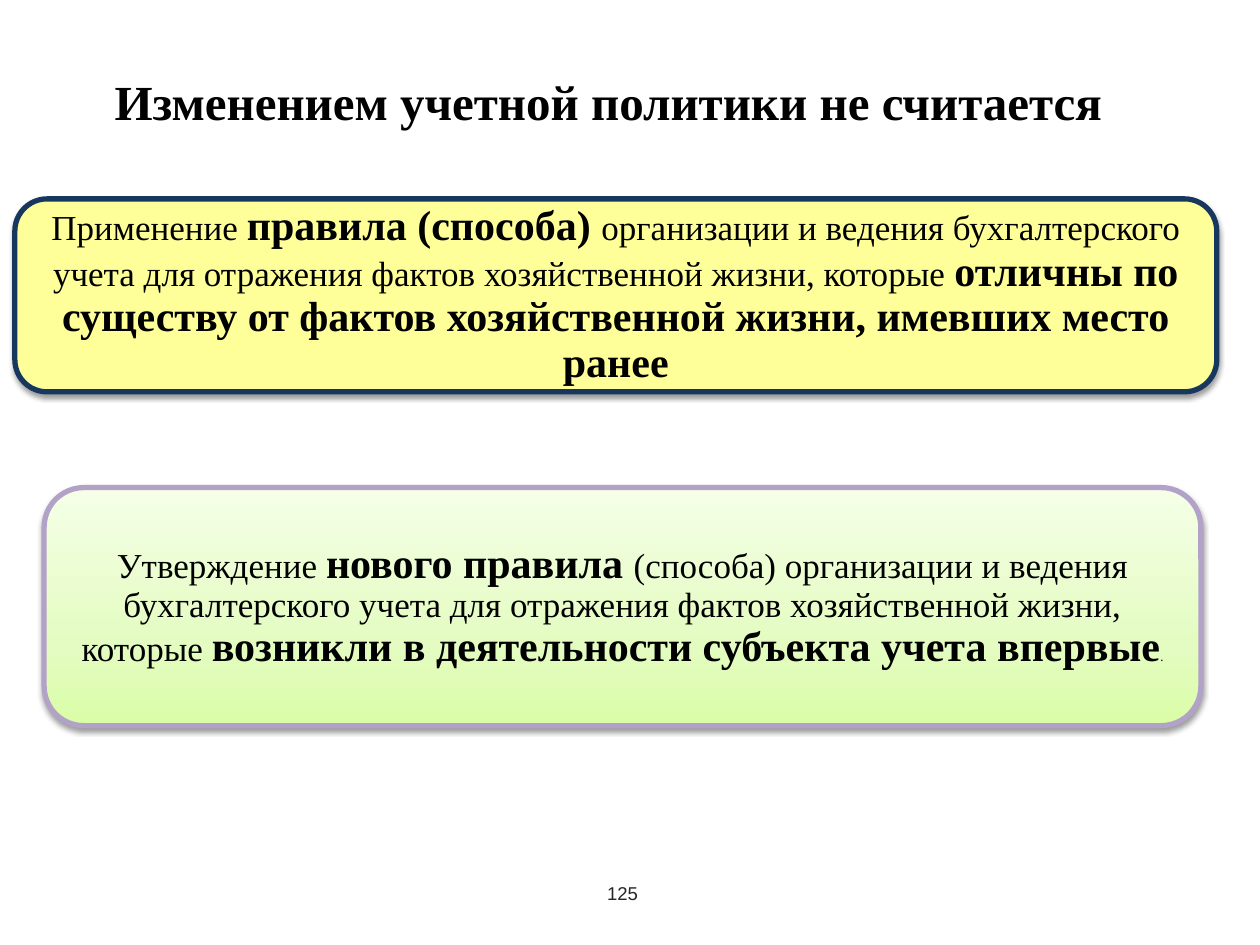
import pptx
import pptx.util
import pptx.dml.color
import pptx.enum.shapes
import pptx.enum.text
import pptx.oxml
import pptx.oxml.ns

Cm = pptx.util.Cm
Pt = pptx.util.Pt
ALIGN = pptx.enum.text.PP_ALIGN
ANCHOR = pptx.enum.text.MSO_ANCHOR

COLOURS = {
    "text": "000000", "number": "252523",
    "yellow": "FFFF99", "navy": "17375E", "lilac": "B3A2C7",
    "green_dark": "DAFDA7", "green_mid": "E4FCC2", "green_light": "F5FFE7",
}
NAMESPACE = pptx.oxml.ns.nsdecls("a")

# Character formats
PLAIN = {"name": "Times New Roman", "size": Pt(20), "bold": False}
STRONG = {"name": "Times New Roman", "size": Pt(24), "bold": True}
HEADING = {"name": "Times New Roman", "size": Pt(28), "bold": True}
FULL_STOP = {"name": "Calibri", "size": Pt(7), "bold": False}
NUMBER = {"name": "Arial", "size": Pt(10.6), "bold": False}

# Frame formats
NO_MARGINS = {"margin_left": 0, "margin_right": 0, "margin_top": 0, "margin_bottom": 0,
              "word_wrap": True, "vertical_anchor": ANCHOR.TOP,
              "auto_size": pptx.enum.text.MSO_AUTO_SIZE.NONE}
PANEL_FRAME = {"margin_left": Cm(0.2), "margin_right": Cm(0.2),
               "margin_top": Cm(0.1), "margin_bottom": Cm(0.1),
               "word_wrap": True, "vertical_anchor": ANCHOR.MIDDLE}


def colour(name):
    return pptx.dml.color.RGBColor.from_string(COLOURS[name])


def apply_format(target, values):
    for attribute, value in values.items():
        setattr(target, attribute, value)


def write_runs(paragraph, runs, text_colour="text"):
    for text, values in runs:
        run = paragraph.add_run()
        run.text = text
        apply_format(run.font, values)
        run.font.color.rgb = colour(text_colour)


def add_title(slide, text):
    title = slide.shapes.title
    apply_format(title, {"left": Cm(2.31), "top": Cm(1.45),
                         "width": Cm(21.92), "height": Cm(1.19)})
    apply_format(title.text_frame, NO_MARGINS)
    paragraph = title.text_frame.paragraphs[0]
    paragraph.alignment = ALIGN.LEFT
    write_runs(paragraph, [(text, HEADING)])


def add_shadow(shape):
    shape.shadow.inherit = False
    effects = shape._element.spPr.find(pptx.oxml.ns.qn("a:effectLst"))
    effects.append(pptx.oxml.parse_xml(
        f'<a:outerShdw {NAMESPACE} blurRad="{Pt(3.1)}" dist="{Pt(1.6)}" dir="5400000" '
        f'rotWithShape="0"><a:srgbClr val="{COLOURS["text"]}"><a:alpha val="38000"/>'
        '</a:srgbClr></a:outerShdw>'))


def fill_gradient(shape, stops):
    """Fill upwards from the first stop to the last one."""
    shape.fill.gradient()
    shape.fill.gradient_angle = 90
    stop_list = shape._element.spPr.find(
        ".//" + pptx.oxml.ns.qn("a:gsLst"))
    for stop in list(stop_list):
        stop_list.remove(stop)
    for position, name in stops:
        stop_list.append(pptx.oxml.parse_xml(
            f'<a:gs {NAMESPACE} pos="{position * 1000}">'
            f'<a:srgbClr val="{COLOURS[name]}"/></a:gs>'))


def add_panel(slide, left, top, width, height, line, runs):
    panel = slide.shapes.add_shape(
        pptx.enum.shapes.MSO_SHAPE.ROUNDED_RECTANGLE,
        Cm(left), Cm(top), Cm(width), Cm(height))
    panel.line.color.rgb = colour(line)
    panel.line.width = Pt(3)
    add_shadow(panel)
    apply_format(panel.text_frame, PANEL_FRAME)
    paragraph = panel.text_frame.paragraphs[0]
    apply_format(paragraph, {"alignment": ALIGN.CENTER, "line_spacing": 0.9})
    write_runs(paragraph, runs)
    return panel


def add_page_number(slide, text):
    box = slide.shapes.add_textbox(Cm(12.24), Cm(17.81), Cm(1.2), Cm(0.43))
    apply_format(box.text_frame, NO_MARGINS)
    paragraph = box.text_frame.paragraphs[0]
    paragraph.line_spacing = Pt(11.6)
    write_runs(paragraph, [(text, NUMBER)], "number")


def main():
    presentation = pptx.Presentation()
    apply_format(presentation, {"slide_width": Cm(25.4), "slide_height": Cm(19.05)})
    slide = presentation.slides.add_slide(presentation.slide_layouts[5])

    add_title(slide, "Изменением учетной политики не считается")

    # Rule for facts that differ in substance
    different = add_panel(slide, 0.3, 4.01, 24.23, 3.89, "navy", [
        ("Применение ", PLAIN),
        ("правила (способа) ", STRONG),
        ("организации и ведения бухгалтерского учета для отражения фактов "
         "хозяйственной жизни, которые ", PLAIN),
        ("отличны по существу от фактов хозяйственной жизни, имевших место ранее", STRONG),
    ])
    different.fill.solid()
    different.fill.fore_color.rgb = colour("yellow")

    # Rule for facts that arise for the first time
    first_time = add_panel(slide, 0.89, 9.83, 23.32, 4.8, "lilac", [
        ("Утверждение ", PLAIN),
        ("нового правила ", STRONG),
        ("(способа) организации и ведения бухгалтерского учета для отражения фактов "
         "хозяйственной жизни, которые ", PLAIN),
        ("возникли в деятельности субъекта учета впервые", STRONG),
        (".", FULL_STOP),
    ])
    fill_gradient(first_time, [(0, "green_dark"), (35, "green_mid"), (100, "green_light")])

    add_page_number(slide, "125")
    presentation.save("out.pptx")


if __name__ == "__main__":
    main()
